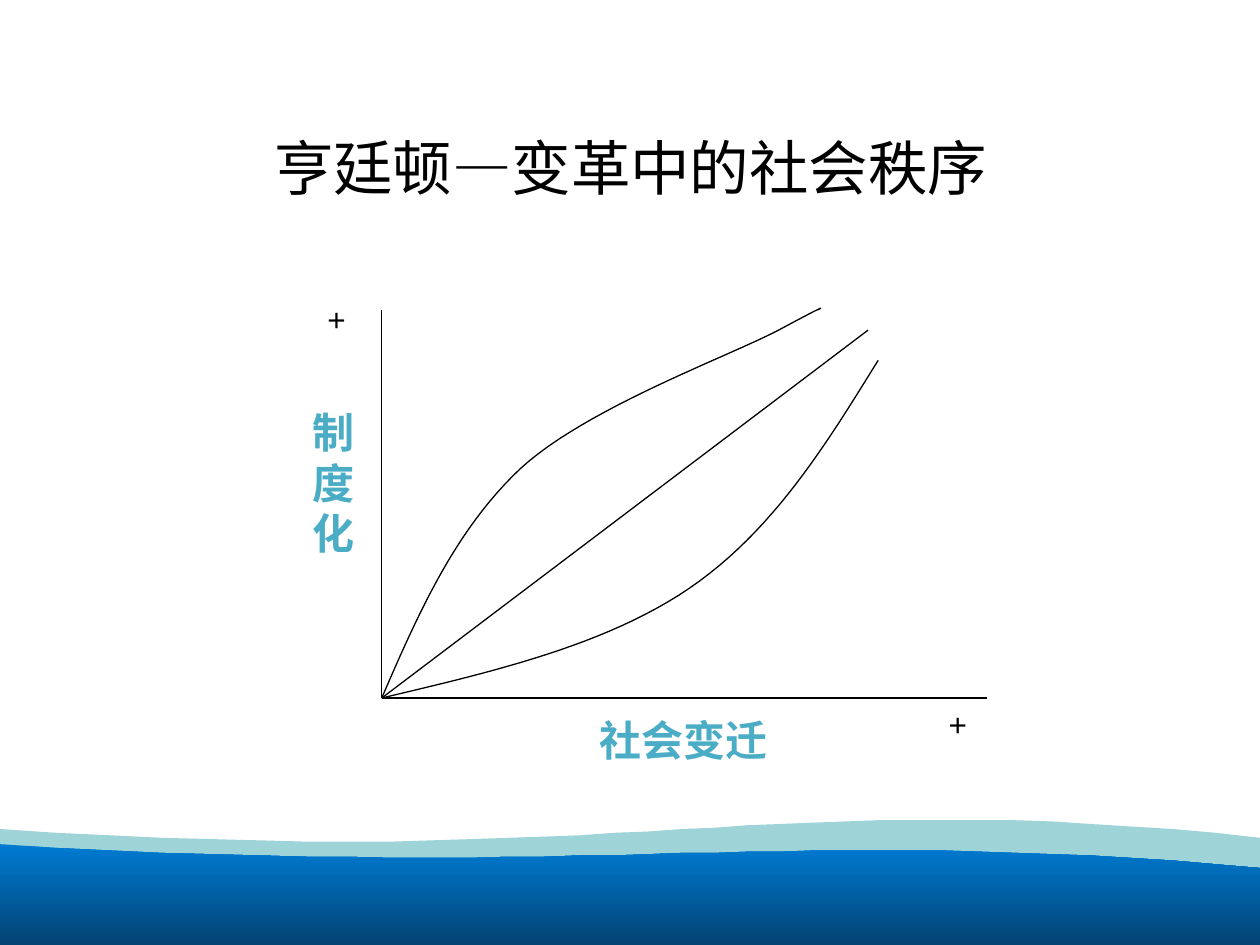
from pptx import Presentation
from pptx import util as u
from pptx.dml.color import RGBColor
from pptx.enum import shapes, text
from pptx.oxml.ns import qn
from lxml import etree

deck = Presentation()
deck.slide_width, deck.slide_height = u.Inches(10), u.Inches(7.5)
page = deck.slides.add_slide(deck.slide_layouts[5])
# Grid: 10 columns by 7.5 rows
COL, ROW = deck.slide_width / 10, deck.slide_height / 7.5
BLACK, TEAL = "000000", "4BACC6"


def color(value):
    return RGBColor.from_string(value)


def draw_outline(points, closed):
    pen = page.shapes.build_freeform(round(points[0][0] * COL), round(points[0][1] * ROW))
    pen.add_line_segments([(round(x * COL), round(y * ROW)) for x, y in points[1:]], close=closed)
    outline = pen.convert_to_shape()
    outline.shadow.inherit = False
    return outline


# Waves along the bottom
wave_x = [0, 0.45, 0.88, 1.29, 1.69, 2.07, 2.43, 2.77, 3.1, 3.42, 3.73, 4.03, 4.32, 4.6,
          4.87, 5.14, 5.41, 5.67, 5.93, 6.19, 6.44, 6.7, 6.97, 7.23, 7.5, 7.78, 8.07,
          8.36, 8.66, 8.98, 9.31, 9.65, 10]
back_y = [6.58, 6.61, 6.63, 6.65, 6.66, 6.67, 6.68, 6.68, 6.68, 6.67, 6.66, 6.65, 6.64,
          6.63, 6.61, 6.6, 6.58, 6.57, 6.55, 6.54, 6.53, 6.52, 6.51, 6.51, 6.51, 6.51,
          6.51, 6.52, 6.54, 6.56, 6.58, 6.61, 6.65]
front_y = [6.7, 6.73, 6.75, 6.77, 6.78, 6.79, 6.8, 6.8, 6.81, 6.81, 6.81, 6.8, 6.8, 6.79,
           6.79, 6.78, 6.77, 6.77, 6.76, 6.76, 6.75, 6.75, 6.75, 6.75, 6.75, 6.76, 6.77,
           6.78, 6.79, 6.81, 6.83, 6.86, 6.89]
waves = []
for crest, base in ((back_y, 7.4), (front_y, 7.5)):
    wave = draw_outline([*zip(wave_x, crest), (10, base), (0, base)], True)
    wave.line.fill.background()
    waves.append(wave)
back, front = waves
back.fill.solid()
back.fill.fore_color.rgb = color("9ED3D7")
front.fill.gradient()
front.fill.gradient_angle = 270
for stop, (value, position) in zip(front.fill.gradient_stops, (("007BD3", 0), ("034373", 1))):
    stop.color.rgb = color(value)
    stop.position = position

# Title
title = page.shapes.title
title.left, title.top = round(0.63 * COL), round(0.33 * ROW)
title.width, title.height = round(8.75 * COL), round(1.33 * ROW)
title.text_frame.auto_size = text.MSO_AUTO_SIZE.NONE
title.text_frame.vertical_anchor = text.MSO_ANCHOR.BOTTOM
title.text_frame.text = "亨廷顿—变革中的社会秩序"
para = title.text_frame.paragraphs[0]
para.alignment = text.PP_ALIGN.CENTER
span = para.runs[0]
span.font.size, span.font.name = u.Pt(34), "Noto Sans CJK SC"
span.font.color.rgb = color(BLACK)
etree.SubElement(span.font._element, qn("a:ea"), typeface="Noto Sans CJK SC")

# Axes and the diagonal, all from the origin
origin = (3.03, 5.54)
strokes = []
for x, y in ((3.03, 2.46), (7.83, 5.54), (6.89, 2.62)):
    line = page.shapes.add_connector(
        shapes.MSO_CONNECTOR.STRAIGHT, round(origin[0] * COL), round(origin[1] * ROW),
        round(x * COL), round(y * ROW))
    etree.SubElement(line._element.spPr, qn("a:effectLst"))
    strokes.append(line)

# Curves above and below the diagonal, as chained cubic segments
STEPS = 24
upper = [origin, (3.32, 4.87), (3.61, 4.21), (4.13, 3.72), (4.65, 3.24), (5.78, 2.83),
         (6.18, 2.62), (6.57, 2.41), (6.53, 2.44), (6.49, 2.46)]
lower = [origin, (3.92, 5.33), (4.81, 5.12), (5.47, 4.67), (6.13, 4.22), (6.55, 3.54),
         (6.97, 2.86)]
for controls in (upper, lower):
    points = [origin]
    for start in range(0, len(controls) - 1, 3):
        segment = controls[start:start + 4]
        for step in range(1, STEPS + 1):
            t = step / STEPS
            weights = ((1 - t) ** 3, 3 * t * (1 - t) ** 2, 3 * t * t * (1 - t), t ** 3)
            points.append([sum(w * p[axis] for w, p in zip(weights, segment))
                           for axis in (0, 1)])
    curve = draw_outline(points, False)
    curve.fill.background()
    strokes.append(curve)
for stroke in strokes:
    stroke.line.color.rgb = color(BLACK)
    stroke.line.width = u.Pt(0.75)

# Axis names and plus signs
name_style = {"size": u.Pt(24), "bold": True, "name": "Arial"}
plus_style = {"size": u.Pt(18), "name": "Arial"}
labels = [
    (["制", "度", "化"], 2.38, 3.18, 0.53, 1.31, False, TEAL, name_style),
    (["社会变迁"], 4.66, 5.62, 1.54, 0.5, False, TEAL, name_style),
    (["+"], 2.5, 2.33, 0.31, 0.4, True, BLACK, plus_style),
    (["+"], 7.43, 5.55, 0.31, 0.4, True, BLACK, plus_style),
]
for lines, x, y, width, height, wrap, shade, style in labels:
    box = page.shapes.add_textbox(round(x * COL), round(y * ROW),
                                  round(width * COL), round(height * ROW))
    frame = box.text_frame
    frame.word_wrap = wrap
    frame.text = "\n".join(lines)
    for para in frame.paragraphs:
        if len(lines) > 1:
            para.line_spacing = u.Pt(28.8)
        span = para.runs[0]
        for key, value in style.items():
            setattr(span.font, key, value)
        span.font.color.rgb = color(shade)

deck.save("out.pptx")
